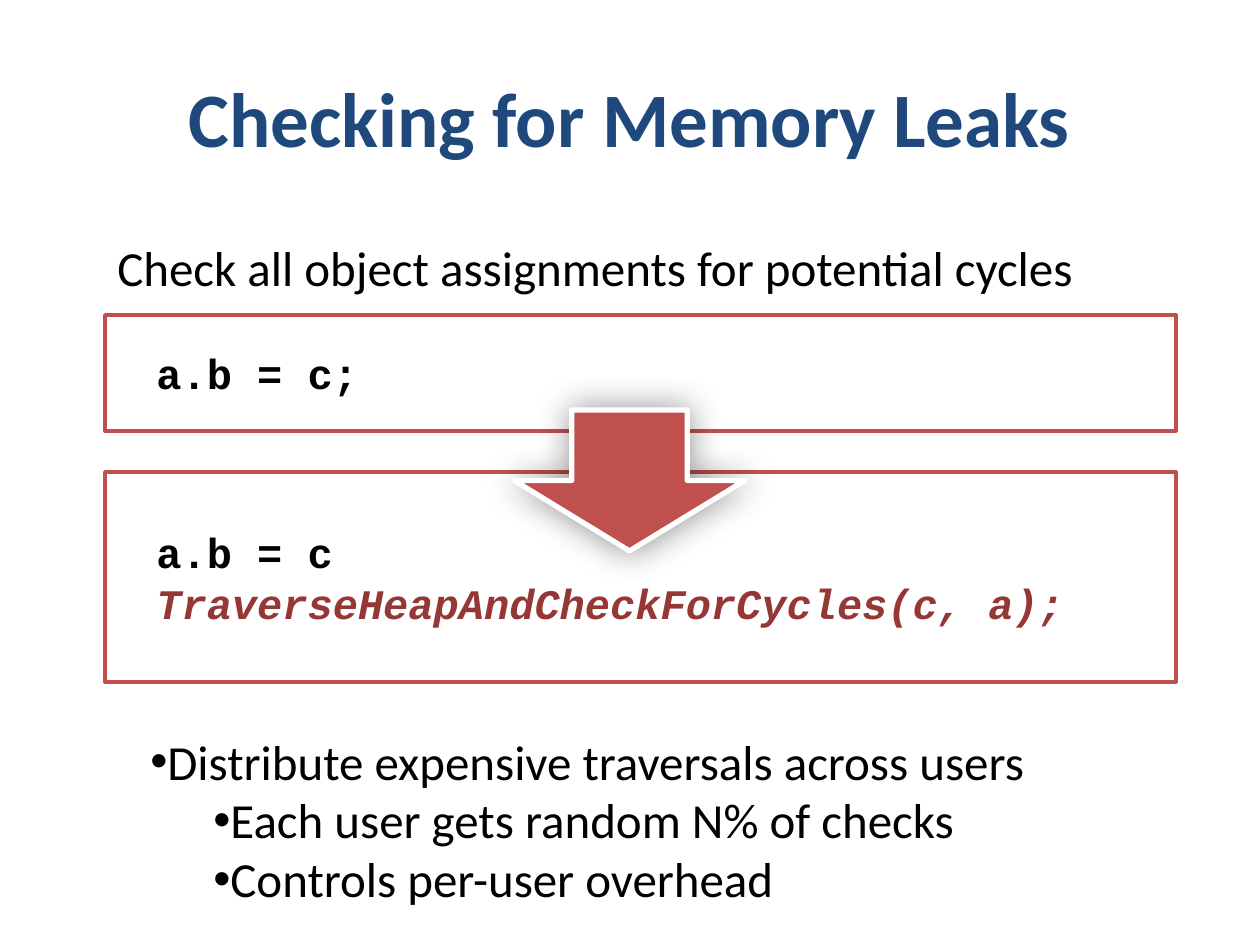
from lxml.etree import SubElement
from pptx import Presentation
from pptx.dml.color import RGBColor
from pptx.enum.shapes import MSO_SHAPE
from pptx.enum.text import MSO_ANCHOR, MSO_AUTO_SIZE, PP_ALIGN
from pptx.oxml.ns import qn
from pptx.util import Emu, Pt

SCALE = 914400 / 126
RED, WHITE, BLACK = "C0504D", "FFFFFF", "000000"


def px(n):
    return Emu(round(n * SCALE))


def color(code):
    return RGBColor.from_string(code)


def style(para, face, size, code, bold=False, slant=False):
    for run in para.runs:
        font = run.font
        font.name, font.size = face, Pt(size)
        font.bold, font.italic = bold, slant
        font.color.rgb = color(code)


def indent(para, left, first=0):
    props = para._p.get_or_add_pPr()
    props.set("marL", str(px(left)))
    props.set("indent", str(px(first)))
    return props


def add_title(slide, text, box):
    title = slide.shapes.title
    title.left, title.top, title.width, title.height = map(px, box)
    frame = title.text_frame
    frame.text = text
    frame.vertical_anchor = MSO_ANCHOR.MIDDLE
    para = frame.paragraphs[0]
    para.alignment = PP_ALIGN.CENTER
    style(para, "Calibri", 44, "1F497D", bold=True)


def add_shape(slide, kind, box, fill, edge, width):
    shape = slide.shapes.add_shape(kind, *map(px, box))
    shape.shadow.inherit = False
    shape.fill.solid()
    shape.fill.fore_color.rgb = color(fill)
    shape.line.color.rgb = color(edge)
    shape.line.width = Pt(width)
    return shape


def add_code(slide, box, lines):
    shape = add_shape(slide, MSO_SHAPE.RECTANGLE, box, WHITE, RED, 2)
    frame = shape.text_frame
    frame.vertical_anchor = MSO_ANCHOR.MIDDLE
    frame.text = "\n".join(text for text, _, _ in lines)
    for para, (_, code, slant) in zip(frame.paragraphs, lines):
        para.alignment = PP_ALIGN.LEFT
        indent(para, 39)
        style(para, "Courier New", 24, code, bold=True, slant=slant)


def add_arrow(slide, box):
    arrow = add_shape(slide, MSO_SHAPE.RIGHT_ARROW, box, RED, WHITE, 3)
    arrow.rotation = 90
    effects = arrow._element.spPr.find(qn("a:effectLst"))
    glow = SubElement(effects, qn("a:outerShdw"), blurRad=str(Pt(20)),
                      dist="0", dir="0", rotWithShape="0")
    tint = SubElement(glow, qn("a:srgbClr"), val=BLACK)
    SubElement(tint, qn("a:alpha"), val="43000")


def add_text(slide, box, lines):
    frame = slide.shapes.add_textbox(*map(px, box)).text_frame
    frame.word_wrap = False
    frame.auto_size = MSO_AUTO_SIZE.SHAPE_TO_FIT_TEXT
    frame.text = "\n".join(text for text, _ in lines)
    for para, (_, level) in zip(frame.paragraphs, lines):
        style(para, "Calibri", 28, BLACK)
        if level is not None:
            para.level = level
            props = indent(para, 63 * level, 33)
            SubElement(props, qn("a:buFont"), typeface="Arial")
            SubElement(props, qn("a:buChar"), char="•")


def main():
    deck = Presentation()
    deck.slide_width, deck.slide_height = px(1260), px(945)
    slide = deck.slides.add_slide(deck.slide_layouts[5])
    add_title(slide, "Checking for Memory Leaks", (63, 38, 1134, 157))
    add_code(slide, (105, 315, 1071, 116), [("a.b = c;", BLACK, False)])
    add_code(slide, (105, 472, 1071, 210), [
        ("a.b = c", BLACK, False),
        ("TraverseHeapAndCheckForCycles(c, a);", "953735", True),
    ])
    add_arrow(slide, (559, 365, 141, 231))
    add_text(slide, (105, 231, 1003, 131), [
        ("Check all object assignments for potential cycles", None),
    ])
    add_text(slide, (105, 725, 935, 190), [
        ("Distribute expensive traversals across users", 0),
        ("Each user gets random N% of checks", 1),
        ("Controls per-user overhead", 1),
    ])
    deck.save("out.pptx")


if __name__ == "__main__":
    main()
